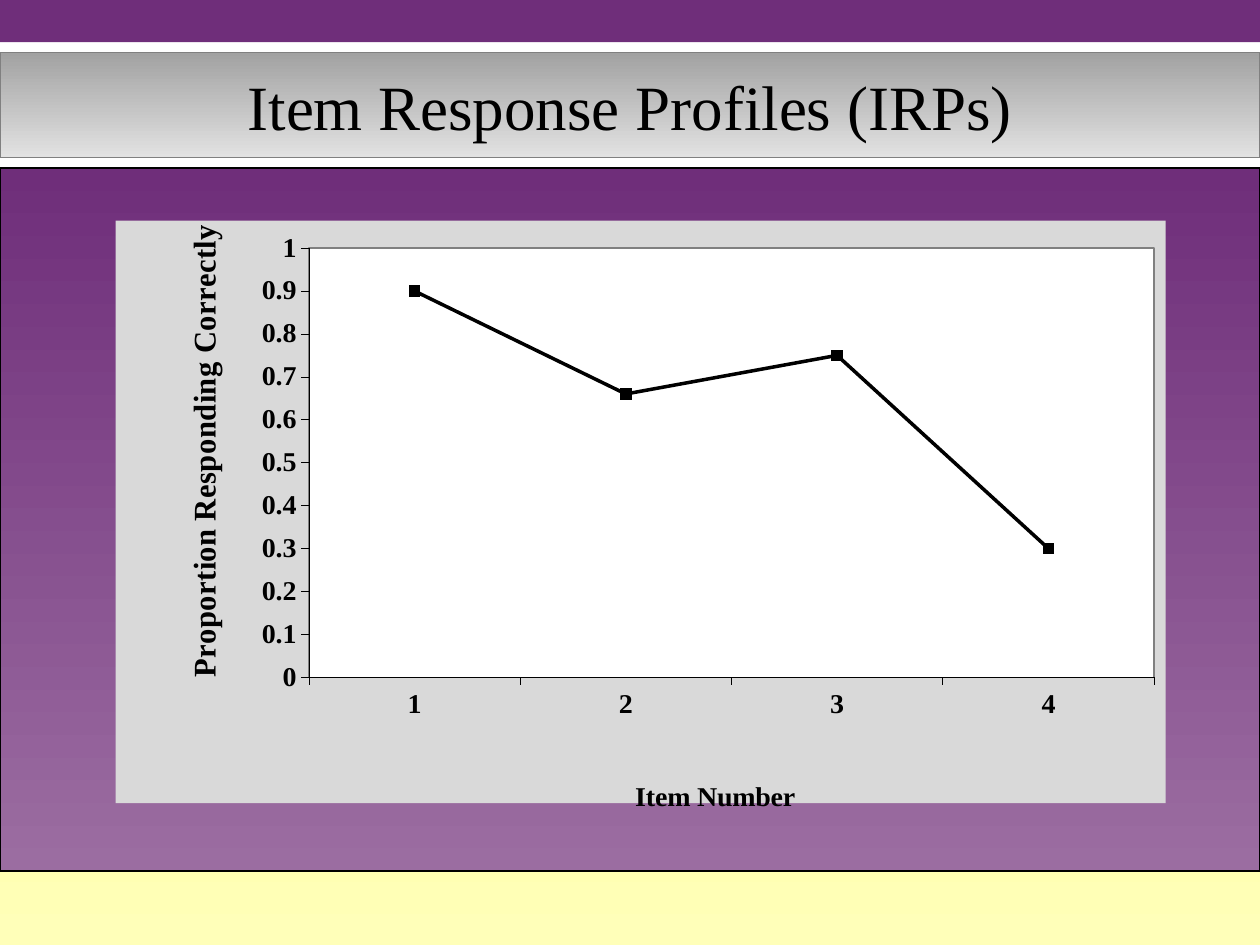
from lxml import etree
from pptx import Presentation
from pptx.chart.data import CategoryChartData
from pptx.dml.color import RGBColor
from pptx.enum.chart import XL_CHART_TYPE as ChartType, XL_MARKER_STYLE as Marker, XL_TICK_MARK as Tick
from pptx.enum.shapes import MSO_SHAPE as Shape
from pptx.enum.text import MSO_ANCHOR as Anchor, PP_ALIGN as Align
from pptx.oxml import parse_xml
from pptx.oxml.ns import nsdecls, qn
from pptx.util import Cm, Pt

BLACK = RGBColor(0x00, 0x00, 0x00)
WHITE = RGBColor(0xFF, 0xFF, 0xFF)
GRAY = RGBColor(0x80, 0x80, 0x80)
PANEL_GRAY = RGBColor(0xD9, 0xD9, 0xD9)
TITLE_TOP = RGBColor(0xA2, 0xA2, 0xA2)
TITLE_BOTTOM = RGBColor(0xE2, 0xE2, 0xE2)
PURPLE = RGBColor(0x6F, 0x2E, 0x7A)
LILAC = RGBColor(0x9B, 0x6D, 0xA1)
YELLOW = RGBColor(0xFF, 0xFF, 0xB3)
PALE_YELLOW = RGBColor(0xFF, 0xFF, 0xB9)

WIDTH, HEIGHT = 25.4, 19.05


def area_format(fill, line=None):
    """Return a c:spPr element with a solid fill and an optional outline."""
    outline = f'<a:solidFill><a:srgbClr val="{line}"/></a:solidFill>' if line else "<a:noFill/>"
    return parse_xml(
        f'<c:spPr {nsdecls("c", "a")}><a:solidFill><a:srgbClr val="{fill}"/></a:solidFill>'
        f'<a:ln w="12700">{outline}</a:ln></c:spPr>')


def place(parent, **position):
    """Give a chart part a manual layout, in fractions of the chart."""
    layout = parent.find(qn("c:layout"))
    if layout is None:
        layout = etree.Element(qn("c:layout"))
        parent.insert(0, layout)
    manual = etree.SubElement(layout, qn("c:manualLayout"))
    if "w" in position:
        etree.SubElement(manual, qn("c:layoutTarget")).set("val", "inner")
    for name in ("xMode", "yMode"):
        etree.SubElement(manual, qn(f"c:{name}")).set("val", "edge")
    for name, value in position.items():
        etree.SubElement(manual, qn(f"c:{name}")).set("val", str(value))


class Deck:
    def __init__(self, font):
        self.font = font
        self.prs = Presentation()
        self.prs.slide_width, self.prs.slide_height = Cm(WIDTH), Cm(HEIGHT)
        self.s = self.prs.slides.add_slide(self.prs.slide_layouts[6])

    def band(self, top, height, color, end=None, line=None):
        """Add a full-width band, shaded downwards when an end colour is given."""
        sp = self.s.shapes.add_shape(Shape.RECTANGLE, 0, Cm(top), Cm(WIDTH), Cm(height))
        sp.shadow.inherit = False
        if end is None:
            sp.fill.solid()
            sp.fill.fore_color.rgb = color
        else:
            sp.fill.gradient()
            sp.fill.gradient_angle = 270
            for stop, rgb in zip(sp.fill.gradient_stops, (color, end)):
                stop.color.rgb = rgb
        if line is None:
            sp.line.fill.background()
        else:
            sp.line.color.rgb = line
            sp.line.width = Pt(0.75)
        return sp

    def title(self, sp, text):
        tf = sp.text_frame
        tf.word_wrap = True
        tf.vertical_anchor = Anchor.MIDDLE
        p = tf.paragraphs[0]
        p.text = text
        p.alignment = Align.CENTER
        self.style(p.font, 36)

    def style(self, font, size, bold=False):
        font.name, font.size, font.bold = self.font, Pt(size), bold
        font.color.rgb = BLACK

    def axis(self, axis, title, size, rotation, x, y):
        axis.has_major_gridlines = False
        axis.major_tick_mark, axis.minor_tick_mark = Tick.OUTSIDE, Tick.NONE
        axis.format.line.color.rgb = BLACK
        axis.format.line.width = Pt(0.25)
        tf = axis.axis_title.text_frame
        p = tf.paragraphs[0]
        p.text = title
        self.style(p.font, size, bold=True)
        tf._txBody.find(qn("a:bodyPr")).set("rot", str(rotation * 60000))
        place(axis.axis_title._element, x=x, y=y)

    def line_chart(self, left, top, width, height, categories, values):
        data = CategoryChartData()
        data.categories = categories
        data.add_series("Series 1", values)
        chart = self.s.shapes.add_chart(
            ChartType.LINE_MARKERS, Cm(left), Cm(top), Cm(width), Cm(height), data).chart
        chart.has_legend = chart.has_title = False
        self.style(chart.font, 16, bold=True)

        series = chart.plots[0].series[0]
        chart.plots[0].vary_by_categories = series.smooth = False
        series.format.line.color.rgb = BLACK
        series.format.line.width = Pt(2)
        series.marker.style, series.marker.size = Marker.SQUARE, 6
        series.marker.format.fill.solid()
        series.marker.format.fill.fore_color.rgb = BLACK
        series.marker.format.line.color.rgb = BLACK

        space = chart._chartSpace
        space.find(qn("c:chart")).addnext(area_format(PANEL_GRAY))
        plot_area = space.find(".//" + qn("c:plotArea"))
        plot_area.append(area_format(WHITE, GRAY))
        place(plot_area, x=0.184, y=0.047, w=0.805, h=0.737)
        return chart


def main():
    deck = Deck("Times New Roman")
    deck.band(17.15, 1.9, YELLOW, PALE_YELLOW)
    deck.band(3.39, 14.17, PURPLE, LILAC, BLACK)
    deck.band(0, 0.85, PURPLE)
    heading = deck.band(1.06, 2.12, TITLE_TOP, TITLE_BOTTOM, GRAY)
    deck.title(heading, "Item Response Profiles (IRPs)")

    chart = deck.line_chart(2.33, 4.45, 21.17, 12.1, ["1", "2", "3", "4"], [0.9, 0.66, 0.75, 0.3])
    deck.axis(chart.category_axis, "Item Number", 16, 0, x=0.49, y=0.95)
    deck.axis(chart.value_axis, "Proportion Responding Correctly", 18, -90, x=0.06, y=0.02)
    value_axis = chart.value_axis
    value_axis.minimum_scale, value_axis.maximum_scale, value_axis.major_unit = 0, 1, 0.1
    value_axis.tick_labels.number_format = "General"
    value_axis.tick_labels.number_format_is_linked = False
    deck.prs.save("out.pptx")


if __name__ == "__main__":
    main()
